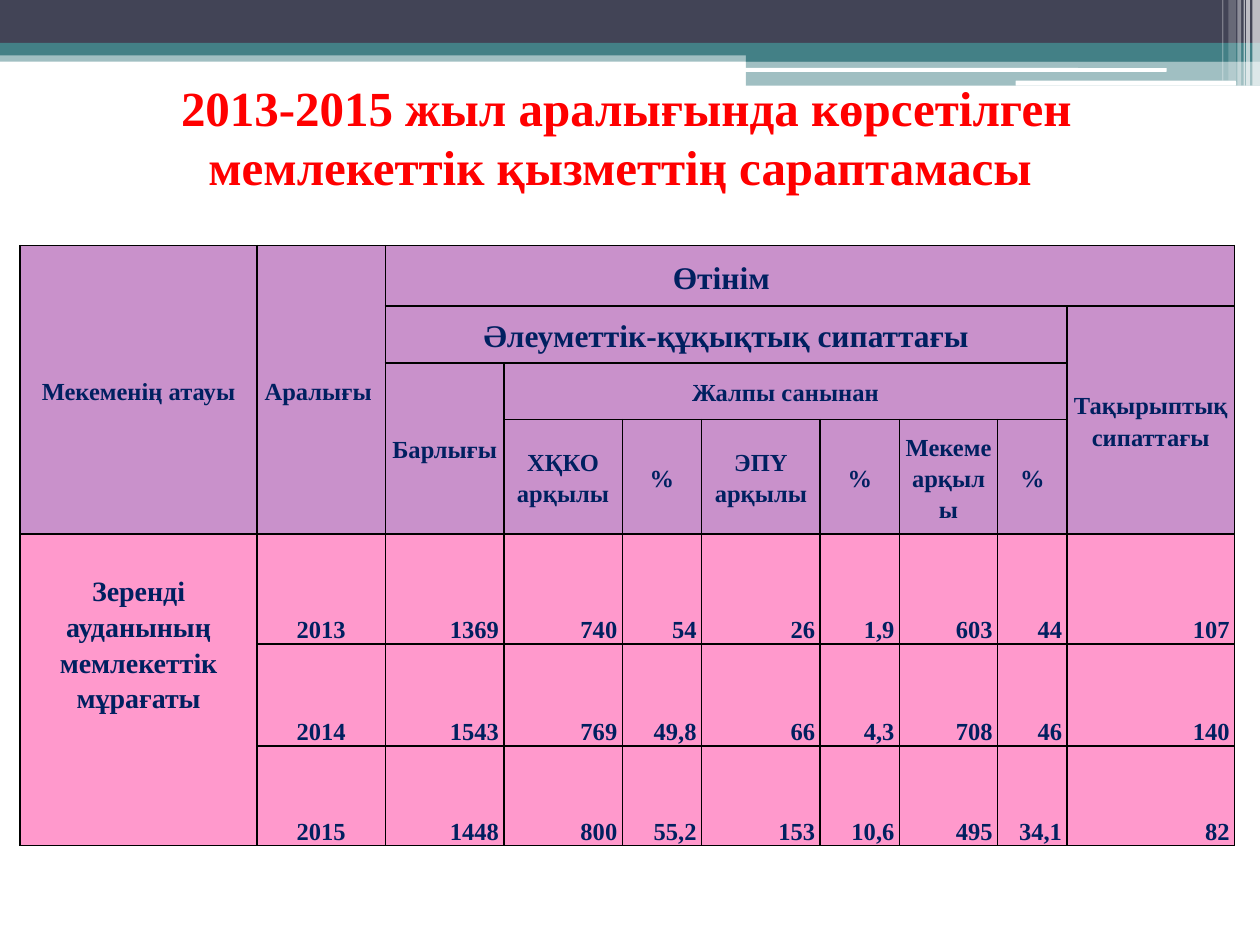
import pptx
import pptx.util
import pptx.dml.color
import pptx.enum.shapes
import pptx.enum.text
import pptx.oxml
import pptx.oxml.ns
import lxml.etree

Inches, Pt = pptx.util.Inches, pptx.util.Pt
ALIGN, ANCHOR = pptx.enum.text.PP_ALIGN, pptx.enum.text.MSO_ANCHOR
SHAPE = pptx.enum.shapes.MSO_SHAPE
qn = pptx.oxml.ns.qn
DARK, TEAL, WHITE = "424456", "438086", "FFFFFF"
RED, NAVY, LILAC, PINK = "FF0000", "002060", "C991CB", "FF99CC"


def rgb(color):
    return pptx.dml.color.RGBColor.from_string(color)


def style(p, size, color, align):
    p.alignment = align
    p.font.name = "Times New Roman"
    p.font.size = Pt(size)
    p.font.bold = True
    p.font.color.rgb = rgb(color)


prs = pptx.Presentation()
prs.slide_width, prs.slide_height = Inches(10), Inches(7.5)
s = prs.slides.add_slide(prs.slide_layouts[6])

# Header bands and stripes: left, top, width, height, colour, opacity %
bands = [
    (0, 0.4, 10, 0.09, TEAL, 50),
    (0, 0, 10, 0.34, DARK, 100),
    (0, 0.34, 10, 0.1, TEAL, 100),
    (5.92, 0.39, 4.08, 0.1, TEAL, 100),
    (5.92, 0.48, 4.08, 0.2, TEAL, 50),
    (5.91, 0.54, 3.35, 0.03, WHITE, 100),
    (8.06, 0.64, 1.75, 0.04, WHITE, 100),
    (9.94, 0, 0.06, 0.68, WHITE, 65),
    (9.89, 0, 0.03, 0.68, WHITE, 65),
    (9.87, 0, 0.01, 0.68, WHITE, 60),
    (9.82, 0, 0.03, 0.68, WHITE, 40),
    (9.75, 0, 0.06, 0.64, WHITE, 20),
    (9.7, 0, 0.01, 0.64, WHITE, 30),
]
for left, top, width, height, color, opacity in bands:
    rounded = color == WHITE and opacity == 100
    sp = s.shapes.add_shape(SHAPE.ROUNDED_RECTANGLE if rounded else SHAPE.RECTANGLE,
                            Inches(left), Inches(top), Inches(width), Inches(height))
    sp.shadow.inherit = False
    sp.line.fill.background()
    sp.fill.solid()
    sp.fill.fore_color.rgb = rgb(color)
    if opacity < 100:
        clr = sp.fill._xPr.find(".//" + qn("a:srgbClr"))
        lxml.etree.SubElement(clr, qn("a:alpha"), val=str(opacity * 1000))

# Title
tf = s.shapes.add_textbox(Inches(0.47), Inches(0.55), Inches(9), Inches(1.06)).text_frame
tf.word_wrap = True
tf.vertical_anchor = ANCHOR.MIDDLE
p = tf.paragraphs[0]
p.text = "2013-2015 жыл аралығында көрсетілген мемлекеттік қызметтің сараптамасы "
style(p, 28, RED, ALIGN.CENTER)

# Table grid
cols = [1.88, 1.02, 0.94, 0.94, 0.63, 0.94, 0.63, 0.78, 0.55, 1.33]
rows = [0.48, 0.45, 0.45, 0.91, 0.87, 0.81, 0.79]
table_shape = s.shapes.add_table(len(rows), len(cols), Inches(0.16), Inches(1.95),
                                 Inches(sum(cols)), Inches(sum(rows)))
table = table_shape.table
for column, width in zip(table.columns, cols):
    column.width = Inches(width)
for row, height in zip(table.rows, rows):
    row.height = Inches(height)

# Fill, margins and black borders of every cell
for i in range(len(rows)):
    for j in range(len(cols)):
        cell = table.cell(i, j)
        cell.margin_left = cell.margin_right = Inches(0.04)
        cell.margin_top = cell.margin_bottom = 0
        tcPr = cell._tc.get_or_add_tcPr()
        for side in ("a:lnL", "a:lnR", "a:lnT", "a:lnB"):
            ln = lxml.etree.SubElement(tcPr, qn(side), w=str(Pt(1)))
            fill = lxml.etree.SubElement(ln, qn("a:solidFill"))
            lxml.etree.SubElement(fill, qn("a:srgbClr"), val="000000")
        cell.fill.solid()
        cell.fill.fore_color.rgb = rgb(LILAC if i < 4 else PINK)

# Merged and single label cells: row, column, row span, column span, text, size
labels = [
    (0, 0, 4, 1, "Мекеменің атауы", 14),
    (0, 1, 4, 1, "Аралығы ", 14),
    (0, 2, 1, 8, "Өтінім", 18),
    (1, 2, 1, 7, "Әлеуметтік-құқықтық сипаттағы", 18),
    (1, 9, 3, 1, "Тақырыптық сипаттағы", 14),
    (2, 2, 2, 1, "Барлығы", 14),
    (2, 3, 1, 6, "Жалпы санынан", 14),
    (4, 0, 3, 1, "Зеренді ауданының мемлекеттік мұрағаты", 16),
]
heads = ["ХҚКО арқылы", "%", "ЭПҮ арқылы", "%", "Мекеме арқылы", "%"]
labels += [(3, j, 1, 1, text, 14) for j, text in enumerate(heads, 3)]
entries = []
for i, j, down, across, text, size in labels:
    if down * across > 1:
        table.cell(i, j).merge(table.cell(i + down - 1, j + across - 1))
    entries.append((i, j, text, size, ALIGN.CENTER, ANCHOR.MIDDLE))

# Yearly figures
data = [
    ["2013", "1369", "740", "54", "26", "1,9", "603", "44", "107"],
    ["2014", "1543", "769", "49,8", "66", "4,3", "708", "46", "140"],
    ["2015", "1448", "800", "55,2", "153", "10,6", "495", "34,1", "82"],
]
for i, values in enumerate(data, 4):
    for j, text in enumerate(values, 1):
        align = ALIGN.CENTER if j == 1 else ALIGN.RIGHT
        entries.append((i, j, text, 14, align, ANCHOR.BOTTOM))

for i, j, text, size, align, anchor in entries:
    cell = table.cell(i, j)
    cell.vertical_anchor = anchor
    p = cell.text_frame.paragraphs[0]
    p.text = text
    p.line_spacing = 1.15
    style(p, size, NAVY, align)

# Left-aligned top heading and top-aligned institution name
table.cell(0, 2).margin_left = Inches(2.28)
table.cell(0, 2).text_frame.paragraphs[0].alignment = ALIGN.LEFT
table.cell(4, 0).margin_top = Inches(0.3)
table.cell(4, 0).vertical_anchor = ANCHOR.TOP

prs.save("out.pptx")
